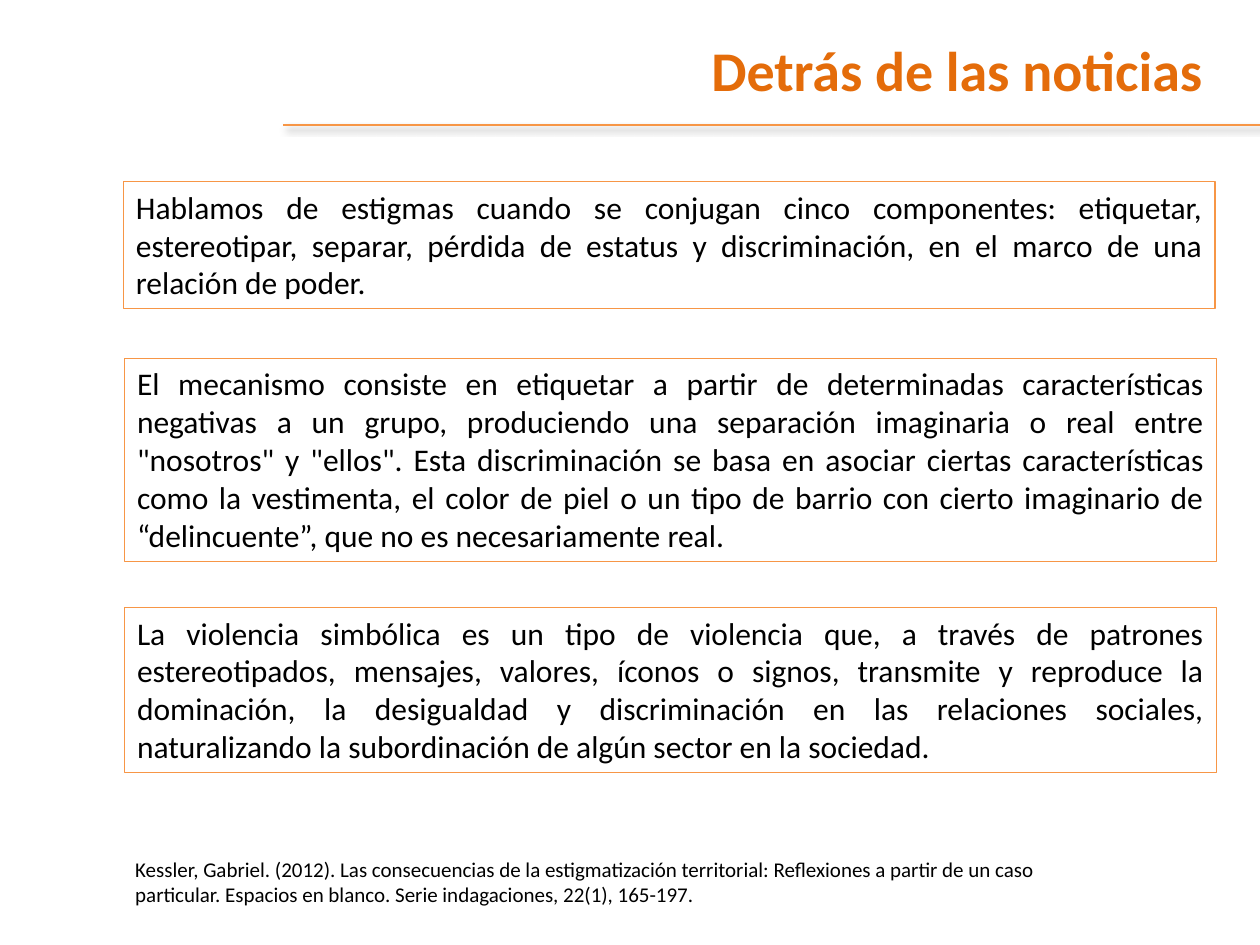
from dataclasses import dataclass

import lxml.etree
import pptx
import pptx.dml.color
import pptx.enum.shapes
import pptx.enum.text
import pptx.oxml
import pptx.oxml.ns
import pptx.util

Pt = pptx.util.Pt
RGBColor = pptx.dml.color.RGBColor
Align = pptx.enum.text.PP_ALIGN


@dataclass(frozen=True)
class Theme:
    font: str = "Calibri"
    title_color: RGBColor = RGBColor(0xE4, 0x6C, 0x0A)
    line_color: RGBColor = RGBColor(0xF7, 0x96, 0x46)
    text_color: RGBColor = RGBColor(0, 0, 0)
    title_size: float = 32
    body_size: float = 18
    citation_size: float = 12
    line_width: float = 0.75


@dataclass(frozen=True)
class Statement:
    left: float
    top: float
    width: float
    height: float
    text: str


THEME = Theme()

STATEMENTS = [
    Statement(
        70.6, 103.8, 623.8, 72.7,
        "Hablamos de estigmas cuando se conjugan cinco componentes: etiquetar, "
        "estereotipar, separar, pérdida de estatus y discriminación, en el marco "
        "de una relación de poder.",
    ),
    Statement(
        71.2, 204.7, 624, 116.3,
        "El mecanismo consiste en etiquetar a partir de determinadas características "
        "negativas a un grupo, produciendo una separación imaginaria o real entre "
        '"nosotros" y "ellos". Esta discriminación se basa en asociar ciertas '
        "características como la vestimenta, el color de piel o un tipo de barrio con "
        "cierto imaginario de “delincuente”, que no es necesariamente real.",
    ),
    Statement(
        71.2, 347.1, 624, 94.5,
        "La violencia simbólica es un tipo de violencia que, a través de patrones "
        "estereotipados, mensajes, valores, íconos o signos, transmite y reproduce la "
        "dominación, la desigualdad y discriminación en las relaciones sociales, "
        "naturalizando la subordinación de algún sector en la sociedad.",
    ),
]

CITATION = (
    "Kessler, Gabriel. (2012). Las consecuencias de la estigmatización territorial: "
    "Reflexiones a partir de un caso particular. Espacios en blanco. "
    "Serie indagaciones,\u00a022(1), 165-197."
)


def write_text(shape, text: str, size: float, color: RGBColor, align: Align,
               bold: bool = False, wrap: bool = True) -> None:
    frame = shape.text_frame
    frame.word_wrap = wrap
    frame.auto_size = pptx.enum.text.MSO_AUTO_SIZE.SHAPE_TO_FIT_TEXT
    frame.vertical_anchor = pptx.enum.text.MSO_ANCHOR.TOP
    paragraph = frame.paragraphs[0]
    paragraph.alignment = align
    run = paragraph.add_run()
    run.text = text
    run.font.name = THEME.font
    run.font.size = Pt(size)
    run.font.bold = bold
    run.font.color.rgb = color


def style_line(line) -> None:
    line.color.rgb = THEME.line_color
    line.width = Pt(THEME.line_width)


def add_title_rule(slide) -> None:
    rule = slide.shapes.add_connector(
        pptx.enum.shapes.MSO_CONNECTOR.STRAIGHT, Pt(720), Pt(71.5), Pt(161.5), Pt(71.5))
    style_line(rule.line)
    # Soft shadow below the rule
    effects = pptx.oxml.parse_xml(
        f'<a:effectLst {pptx.oxml.ns.nsdecls("a")}>'
        f'<a:outerShdw blurRad="{Pt(4)}" dist="{Pt(3)}" dir="2700000" '
        'algn="tl" rotWithShape="0"><a:srgbClr val="000000">'
        '<a:alpha val="40000"/></a:srgbClr></a:outerShdw></a:effectLst>')
    rule._element.spPr.append(effects)


def add_title(slide, text: str) -> None:
    title = slide.shapes.title
    title.left, title.top = Pt(396.7), Pt(16.6)
    title.width, title.height = Pt(298), Pt(46)
    write_text(title, text, THEME.title_size, THEME.title_color, Align.RIGHT,
               bold=True, wrap=False)


def add_statement(slide, statement: Statement) -> None:
    box = slide.shapes.add_shape(
        pptx.enum.shapes.MSO_SHAPE.RECTANGLE, Pt(statement.left), Pt(statement.top),
        Pt(statement.width), Pt(statement.height))
    box.shadow.inherit = False
    box.fill.background()
    style_line(box.line)
    write_text(box, statement.text, THEME.body_size, THEME.text_color, Align.JUSTIFY)


def add_citation(slide, text: str) -> None:
    box = slide.shapes.add_textbox(Pt(70.2), Pt(486), Pt(579), Pt(36.3))
    write_text(box, text, THEME.citation_size, THEME.text_color, Align.LEFT)


def main() -> None:
    presentation = pptx.Presentation()
    presentation.slide_width, presentation.slide_height = Pt(720), Pt(540)
    slide = presentation.slides.add_slide(presentation.slide_layouts[5])

    # Heading
    add_title_rule(slide)
    add_title(slide, "Detrás de las noticias")

    # Framed statements and their source
    for statement in STATEMENTS:
        add_statement(slide, statement)
    add_citation(slide, CITATION)

    presentation.save("out.pptx")


if __name__ == "__main__":
    main()
